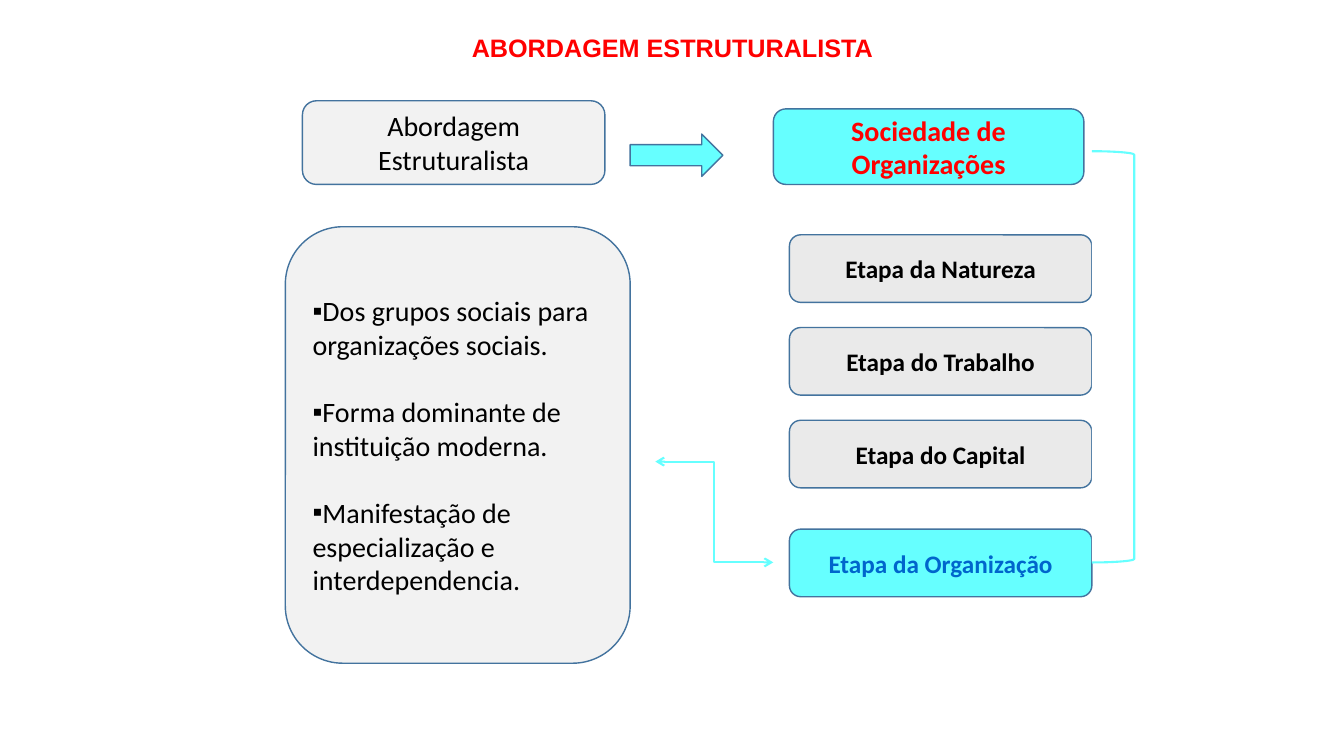
from dataclasses import dataclass

import pptx
import pptx.dml.color
import pptx.enum.shapes
import pptx.enum.text
import pptx.oxml
import pptx.oxml.ns
import pptx.util
from pptx.util import Inches, Pt

GEOMETRY = pptx.enum.shapes.MSO_SHAPE
ALIGN = pptx.enum.text.PP_ALIGN
ANCHOR = pptx.enum.text.MSO_ANCHOR


@dataclass(frozen=True)
class Theme:
    cyan: str = "66FFFF"
    panel: str = "F2F2F2"
    stage: str = "EAEAEA"
    outline: str = "43739E"
    white: str = "FFFFFF"
    black: str = "000000"
    red: str = "FF0000"
    blue: str = "0066CC"
    title_font: str = "Arial"
    body_font: str = "Calibri"
    small: int = 18
    large: int = 20
    thin: float = 1
    thick: float = 1.5


THEME = Theme()


@dataclass(frozen=True)
class Area:
    left: float
    top: float
    width: float
    height: float

    def lengths(self) -> tuple:
        return tuple(Inches(v) for v in (self.left, self.top, self.width, self.height))


@dataclass(frozen=True)
class Block:
    area: Area
    geometry: GEOMETRY
    fill: str
    text: str = ""
    color: str = THEME.black
    size: int = THEME.large
    bold: bool = False
    outline: str = THEME.outline
    weight: float = THEME.thin


def rgb(value: str) -> pptx.dml.color.RGBColor:
    return pptx.dml.color.RGBColor.from_string(value)


def add_xml(parent, tag: str, **attributes: str) -> None:
    child = pptx.oxml.parse_xml(f"<a:{tag} {pptx.oxml.ns.nsdecls('a')}/>")
    for name, value in attributes.items():
        child.set(name, value)
    parent.append(child)


def write(frame, *paragraphs: str, size: int = THEME.large, color: str = THEME.black,
          bold: bool = False, font: str = THEME.body_font, align=ALIGN.CENTER,
          anchor=ANCHOR.MIDDLE, spacing: float = 1.0, gap: float = 0,
          bullet: str = "") -> None:
    """Fill a text frame; gap is the space in points between paragraphs."""
    frame.word_wrap = True
    frame.auto_size = pptx.enum.text.MSO_AUTO_SIZE.NONE
    frame.vertical_anchor = anchor
    for index, text in enumerate(paragraphs):
        paragraph = frame.add_paragraph() if index else frame.paragraphs[0]
        paragraph.alignment = align
        paragraph.line_spacing = spacing
        paragraph.space_before = Pt(gap if index else 0)
        paragraph.space_after = Pt(0)
        if bullet:
            properties = paragraph._p.get_or_add_pPr()
            properties.set("marL", "0")
            properties.set("indent", "0")
            add_xml(properties, "buFont", typeface=THEME.title_font)
            add_xml(properties, "buChar", char=bullet)
        run = paragraph.add_run()
        run.text = text
        run.font.name = font
        run.font.size = Pt(size)
        run.font.bold = bold
        run.font.color.rgb = rgb(color)


def place(placeholder, area: Area) -> None:
    placeholder.left, placeholder.top, placeholder.width, placeholder.height = area.lengths()


def draw_block(slide, block: Block):
    shape = slide.shapes.add_shape(block.geometry, *block.area.lengths())
    shape.shadow.inherit = False
    shape.fill.solid()
    shape.fill.fore_color.rgb = rgb(block.fill)
    shape.line.color.rgb = rgb(block.outline)
    shape.line.width = Pt(block.weight)
    if block.text:
        write(shape.text_frame, block.text, size=block.size, color=block.color,
              bold=block.bold)
    return shape


def draw_double_arrow(slide, start: tuple[float, float], end: tuple[float, float]) -> None:
    arrow = slide.shapes.add_connector(
        pptx.enum.shapes.MSO_CONNECTOR.ELBOW, *(Inches(v) for v in start + end))
    arrow.line.color.rgb = rgb(THEME.cyan)
    arrow.line.width = Pt(THEME.thick)
    outline = arrow.line._get_or_add_ln()
    for tag in ("headEnd", "tailEnd"):
        add_xml(outline, tag, type="arrow")
    add_xml(arrow.element.spPr, "effectLst")


ROUNDED = GEOMETRY.FLOWCHART_ALTERNATE_PROCESS
STAGE_LEFT, STAGE_TOP, STAGE_PITCH = 7.83, 2.33, 0.92
STAGE_WIDTH, STAGE_HEIGHT = 3, 0.67
EARLY_STAGES = ("Etapa da Natureza", "Etapa do Trabalho", "Etapa do Capital")
FEATURES_AREA = Area(2.83, 2.25, 3.42, 4.33)
FEATURES = (
    "Dos grupos sociais para organizações sociais.",
    "Forma dominante de instituição moderna.",
    "Manifestação de especialização e interdependencia.",
)

BLOCKS = (
    Block(Area(6.25, 1.33, 0.92, 0.42), GEOMETRY.RIGHT_ARROW, THEME.cyan),
    *(Block(Area(STAGE_LEFT, STAGE_TOP + i * STAGE_PITCH, STAGE_WIDTH, STAGE_HEIGHT),
            GEOMETRY.ROUNDED_RECTANGLE, THEME.stage, stage, size=THEME.small, bold=True)
      for i, stage in enumerate(EARLY_STAGES)),
    Block(Area(STAGE_LEFT, 5.25, STAGE_WIDTH, STAGE_HEIGHT), GEOMETRY.ROUNDED_RECTANGLE,
          THEME.cyan, "Etapa da Organização", THEME.blue, THEME.small, True),
    Block(Area(10.83, 1.5, 0.42, 4.08), GEOMETRY.RIGHT_BRACKET, THEME.white,
          outline=THEME.cyan, weight=THEME.thick),
    Block(Area(3, 1, 3, 0.83), ROUNDED, THEME.panel, "Abordagem Estruturalista"),
    Block(Area(7.67, 1.08, 3.08, 0.75), ROUNDED, THEME.cyan,
          "Sociedade de Organizações", THEME.red, bold=True),
)


def main() -> None:
    presentation = pptx.Presentation()
    presentation.slide_width = Inches(13.33)
    presentation.slide_height = Inches(7.5)
    slide = presentation.slides.add_slide(presentation.slide_layouts[1])

    title = slide.shapes.title
    place(title, Area(2.17, 0.3, 9, 0.61))
    write(title.text_frame, "ABORDAGEM ESTRUTURALISTA", size=THEME.small, color=THEME.red,
          bold=True, font=THEME.title_font, anchor=ANCHOR.TOP, spacing=0.9)

    features = slide.placeholders[1]
    place(features, FEATURES_AREA)
    features.text_frame.margin_left = features.text_frame.margin_right = Inches(0.27)
    write(features.text_frame, *FEATURES, align=ALIGN.LEFT, gap=24, bullet="▪")
    panel = draw_block(slide, Block(FEATURES_AREA, ROUNDED, THEME.panel))
    features.element.addprevious(panel.element)

    for block in BLOCKS:
        draw_block(slide, block)
    draw_double_arrow(slide, (7.67, 5.58), (6.5, 4.58))

    presentation.save("out.pptx")


if __name__ == "__main__":
    main()
